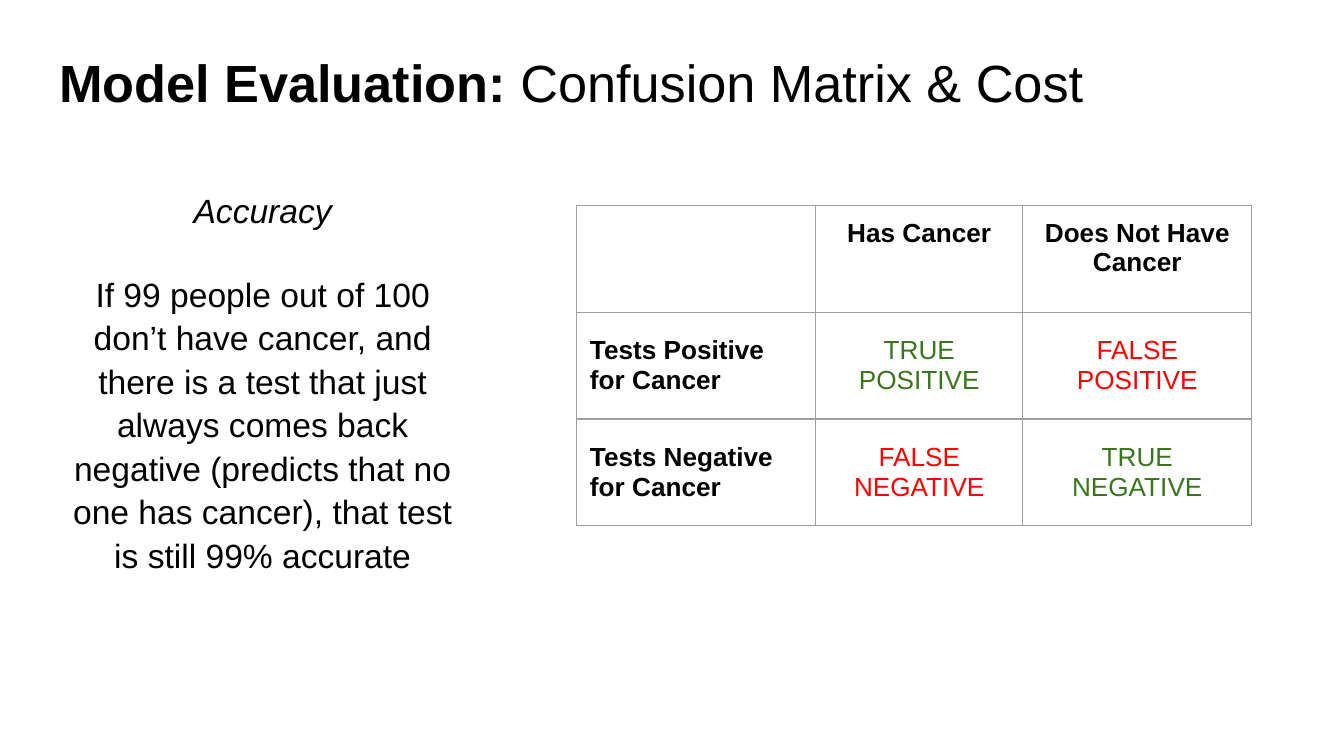
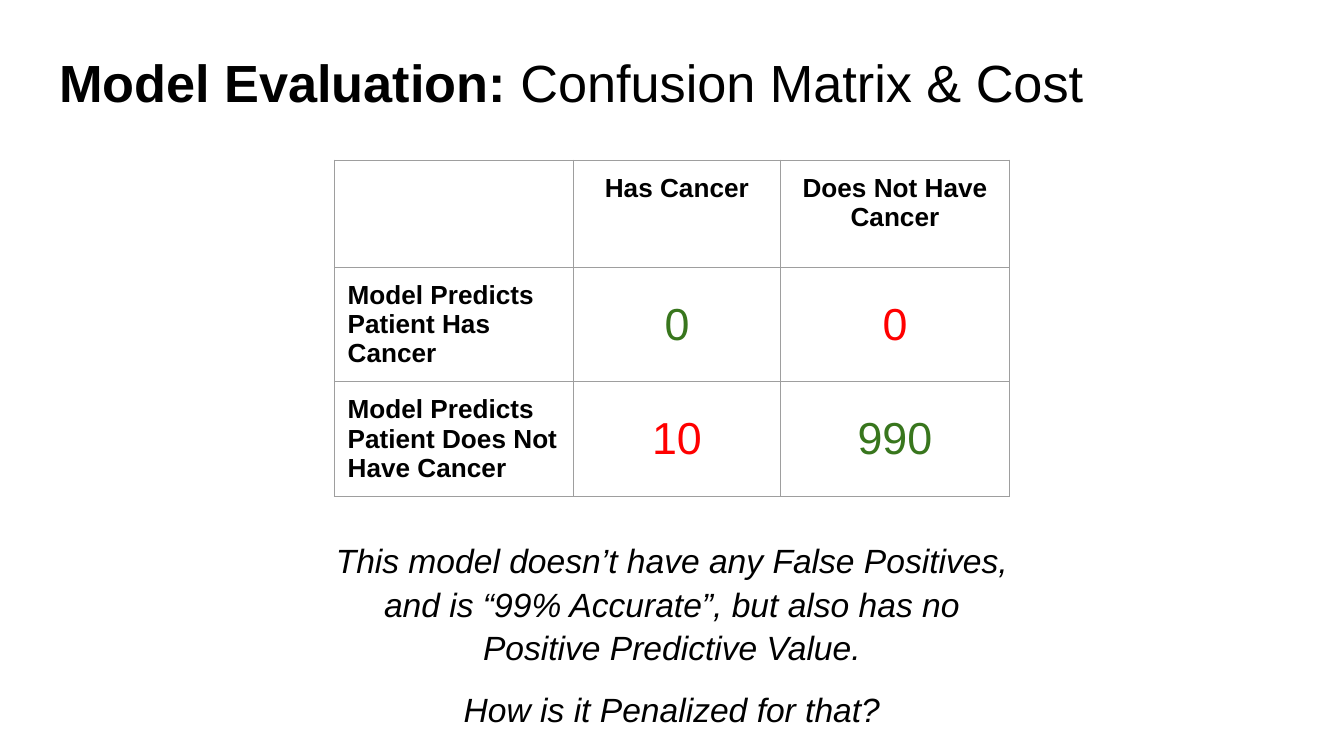
from lxml import etree
from pptx import Presentation
from pptx import util as u
from pptx.dml import color as dml
from pptx.enum import text as t
from pptx.oxml import ns

BLACK, GREEN, RED, GRAY = "000000", "38761D", "FF0000", "9E9E9E"
FONT = "Arial"
PAD = u.Cm(0.25)
LINE = 1.08
COLS = (4.52, 3.91, 4.33)
ROW = 2.02
HEADS = ("", "Has Cancer", "Does Not Have Cancer")


def paint(code):
    return dml.RGBColor.from_string(code)


def write(para, words, size=18, color=BLACK, bold=False, italic=False,
          center=True, gap=0, line=None):
    para.alignment = t.PP_ALIGN.CENTER if center else t.PP_ALIGN.LEFT
    para.space_before = u.Pt(gap)
    if line:
        para.line_spacing = line
    run = para.add_run()
    run.text = words
    font = run.font
    font.name, font.size = FONT, u.Pt(size)
    font.bold, font.italic = bold, italic
    font.color.rgb = paint(color)


def pad(box):
    box.margin_left = box.margin_right = PAD
    box.margin_top = box.margin_bottom = PAD


def set_frame(frame):
    pad(frame)
    frame.word_wrap = True
    frame.auto_size = t.MSO_AUTO_SIZE.NONE
    frame.vertical_anchor = t.MSO_ANCHOR.TOP


def add_slide(deck):
    slide = deck.slides.add_slide(deck.slide_layouts[5])
    title = slide.shapes.title
    title.left, title.top = u.Cm(0.87), u.Cm(0.61)
    title.width, title.height = u.Cm(23.67), u.Cm(1.6)
    set_frame(title.text_frame)
    para = title.text_frame.paragraphs[0]
    write(para, "Model Evaluation: ", size=28, bold=True, center=False, line=LINE)
    write(para, "Confusion Matrix & Cost", size=28, center=False, line=LINE)
    return slide


def add_note(slide, left, top, width, height, parts):
    box = slide.shapes.add_textbox(u.Cm(left), u.Cm(top), u.Cm(width), u.Cm(height))
    frame = box.text_frame
    set_frame(frame)
    for i, (words, form) in enumerate(parts):
        para = frame.add_paragraph() if i else frame.paragraphs[0]
        write(para, words, line=LINE, **form)


def add_edges(cell):
    props = cell._tc.get_or_add_tcPr()
    for side in ("lnL", "lnR", "lnT", "lnB"):
        edge = etree.SubElement(props, ns.qn("a:" + side), w=str(u.Pt(0.75)))
        fill = etree.SubElement(edge, ns.qn("a:solidFill"))
        etree.SubElement(fill, ns.qn("a:srgbClr"), val=GRAY)


def add_matrix(slide, left, top, rows, size):
    grid = [HEADS, *rows]
    frame = slide.shapes.add_table(
        len(grid), len(COLS), u.Cm(left), u.Cm(top),
        u.Cm(sum(COLS)), u.Cm(ROW * len(grid)))
    table = frame.table
    table.first_row = table.horz_banding = False
    for col, width in zip(table.columns, COLS):
        col.width = u.Cm(width)
    for r, row in enumerate(grid):
        table.rows[r].height = u.Cm(ROW)
        for c, words in enumerate(row):
            cell = table.cell(r, c)
            pad(cell)
            add_edges(cell)
            cell.fill.background()
            cell.vertical_anchor = t.MSO_ANCHOR.MIDDLE if r else t.MSO_ANCHOR.TOP
            if not words:
                continue
            para = cell.text_frame.paragraphs[0]
            if r and c:
                write(para, words, size=size, color=GREEN if r == c else RED)
            else:
                write(para, words, size=14, bold=True, center=c > 0)


def main():
    deck = Presentation()
    deck.slide_width, deck.slide_height = u.Cm(25.4), u.Cm(14.29)

    slide = add_slide(deck)
    add_matrix(slide, 10.9, 3.88, [
        ("Tests Positive for Cancer", "TRUE POSITIVE", "FALSE POSITIVE"),
        ("Tests Negative for Cancer", "FALSE NEGATIVE", "TRUE NEGATIVE"),
    ], size=14)
    add_note(slide, 1.04, 3.28, 7.85, 9.3, [
        ("Accuracy", {"italic": True}),
        ("If 99 people out of 100 don’t have cancer, and there is a test that "
         "just always comes back negative (predicts that no one has cancer), "
         "that test is still 99% accurate", {"gap": 21.6}),
    ])

    slide = add_slide(deck)
    add_matrix(slide, 6.32, 3.03, [
        ("Model Predicts Patient Has Cancer", "0", "0"),
        ("Model Predicts Patient Does Not Have Cancer", "10", "990"),
    ], size=24)
    add_note(slide, 6.03, 9.9, 13.34, 3.89, [
        ("This model doesn’t have any False Positives, and is “99% Accurate”, "
         "but also has no Positive Predictive Value.", {"italic": True}),
        ("How is it Penalized for that?", {"italic": True, "gap": 9.6}),
    ])

    deck.save("out.pptx")


if __name__ == "__main__":
    main()
